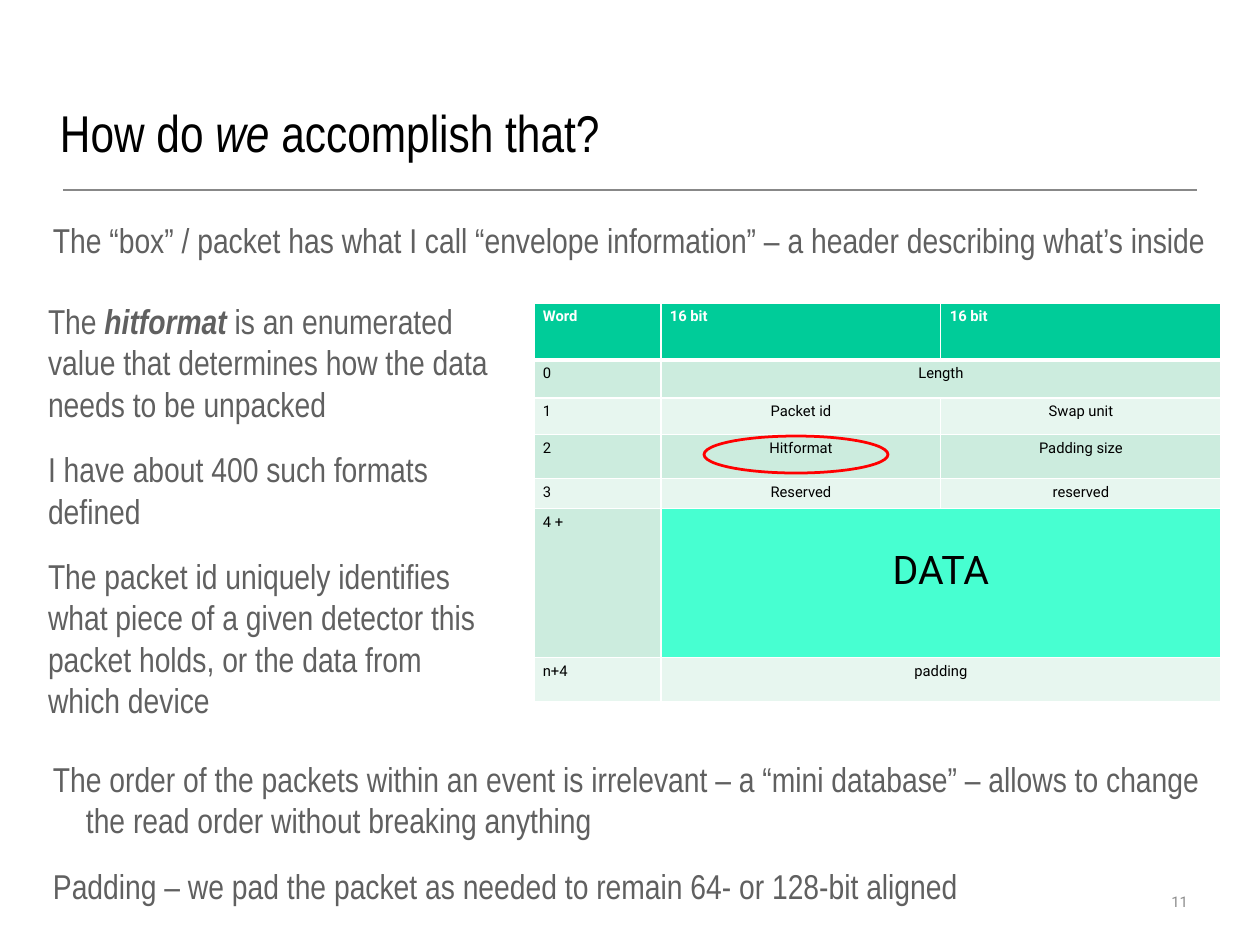
import pptx
import pptx.dml.color
import pptx.enum.shapes
import pptx.enum.text
import pptx.oxml
import pptx.oxml.ns
import pptx.util
from dataclasses import dataclass

ALIGN = pptx.enum.text.PP_ALIGN
ANCHOR = pptx.enum.text.MSO_ANCHOR

# Content: a paragraph is a list of (text, style), style being "", "b", "i" or "bi"
TITLE = [[("How do ", ""), ("we", "i"), (" accomplish that?", "")]]
INTRO = [[("The “box” / packet has what I call “envelope information” – "
           "a header describing what’s inside", "")]]
FORMATS = [
    [("The ", ""), ("hitformat", "bi"),
     (" is an enumerated value that determines how the data needs to be unpacked", "")],
    [("I have about 400 such formats defined", "")],
    [("The packet id uniquely identifies what piece of a given detector this packet holds, "
      "or the data from which device", "")],
]
CLOSING = [
    [("The order of the packets within an event is irrelevant – a “mini database” – "
      "allows to change the read order without breaking anything", "")],
    [("Padding – we pad the packet as needed to remain 64- or 128-bit aligned", "")],
]
PAGE_NUMBER = [[("11", "")]]

# Packet layout: row height in px, then cells; a row of two cells spans both halves
PACKET_COLUMNS = [127, 280, 280]
PACKET_ROWS = [
    (57, ["Word", "16 bit", "16 bit"]),
    (38, ["0", "Length"]),
    (37, ["1", "Packet id", "Swap unit"]),
    (44, ["2", "Hitformat", "Padding size"]),
    (30, ["3", "Reserved", "reserved"]),
    (149, ["4 +", "DATA"]),
    (44, ["n+4", "padding"]),
]


@dataclass(frozen=True)
class Theme:
    text_font: str = "Arial Narrow"
    table_font: str = "Roboto"
    title_size: float = 42
    body_size: float = 28
    data_size: float = 32
    small_size: float = 12
    paragraph_gap: float = 19.6
    black: str = "000000"
    white: str = "FFFFFF"
    body: str = "606060"
    rule: str = "888888"
    number: str = "8C8C8C"
    mark: str = "FF0000"
    header: str = "00CC99"
    band_dark: str = "CCECDE"
    band_light: str = "E7F6EF"
    data: str = "47FFD1"


THEME = Theme()


def px(length):
    return pptx.util.Emu(length * 10320)


def rgb(value):
    return pptx.dml.color.RGBColor.from_string(value)


def set_font(font, name, size, color):
    font.name = name
    font.size = pptx.util.Pt(size)
    font.color.rgb = rgb(color)


def add_text(slide, box, paragraphs, size, color, font=THEME.text_font, inset=5,
             hanging=False, anchor=ANCHOR.TOP, align=ALIGN.LEFT):
    frame = slide.shapes.add_textbox(*map(px, box)).text_frame
    frame.word_wrap = True
    frame.vertical_anchor = anchor
    frame.margin_left = frame.margin_right = px(inset)
    frame.margin_top = frame.margin_bottom = px(5)
    for index, runs in enumerate(paragraphs):
        paragraph = frame.add_paragraph() if index else frame.paragraphs[0]
        paragraph.alignment = align
        if index:
            paragraph.space_before = pptx.util.Pt(THEME.paragraph_gap)
        if hanging:
            properties = paragraph._p.get_or_add_pPr()
            properties.set("marL", str(px(34)))
            properties.set("indent", str(px(-33)))
        set_font(paragraph.font, font, size, color)
        for text, style in runs:
            run = paragraph.add_run()
            run.text = text
            if "b" in style:
                run.font.bold = True
            if "i" in style:
                run.font.italic = True


def set_borders(cell, bottom_width):
    """White lines on all four sides; they must precede the fill in tcPr."""
    properties = cell._tc.get_or_add_tcPr()
    sides = [("L", 1), ("R", 1), ("T", 1), ("B", bottom_width)]
    for position, (side, width) in enumerate(sides):
        properties.insert(position, pptx.oxml.parse_xml(
            f'<a:ln{side} {pptx.oxml.ns.nsdecls("a")} w="{pptx.util.Pt(width)}">'
            f'<a:solidFill><a:srgbClr val="{THEME.white}"/></a:solidFill></a:ln{side}>'))


def add_packet_table(slide, left, top):
    heights = [height for height, _ in PACKET_ROWS]
    table = slide.shapes.add_table(
        len(heights), len(PACKET_COLUMNS), px(left), px(top),
        px(sum(PACKET_COLUMNS)), px(sum(heights))).table
    for column, width in zip(table.columns, PACKET_COLUMNS):
        column.width = px(width)
    for r, (height, texts) in enumerate(PACKET_ROWS):
        table.rows[r].height = px(height)
        band = THEME.band_dark if r % 2 else THEME.band_light
        for c in range(len(PACKET_COLUMNS)):
            cell = table.cell(r, c)
            text = texts[c] if c < len(texts) else ""
            is_data = text == "DATA"
            cell.fill.solid()
            cell.fill.fore_color.rgb = rgb(
                THEME.header if r == 0 else THEME.data if is_data else band)
            set_borders(cell, 1 if r else 3)
            cell.text = text
            paragraph = cell.text_frame.paragraphs[0]
            paragraph.alignment = ALIGN.CENTER if r and c else ALIGN.LEFT
            set_font(paragraph.font, THEME.table_font,
                     THEME.data_size if is_data else THEME.small_size,
                     THEME.black if r else THEME.white)
            paragraph.font.bold = r == 0
            if is_data:
                cell.margin_top = px(39)
        if len(texts) == 2:
            table.cell(r, 1).merge(table.cell(r, 2))


def add_title_rule(slide):
    rule = slide.shapes.add_connector(
        pptx.enum.shapes.MSO_CONNECTOR.STRAIGHT, px(63), px(190), px(1197), px(190))
    rule.line.color.rgb = rgb(THEME.rule)
    rule.line.width = pptx.util.Pt(1)
    rule._element.spPr.append(
        pptx.oxml.parse_xml(f'<a:effectLst {pptx.oxml.ns.nsdecls("a")}/>'))


def add_hitformat_mark(slide):
    mark = slide.shapes.add_shape(
        pptx.enum.shapes.MSO_SHAPE.OVAL, px(704), px(436), px(184), px(37))
    mark.shadow.inherit = False
    mark.fill.background()
    mark.line.color.rgb = rgb(THEME.mark)
    mark.line.width = pptx.util.Pt(2.25)


def main():
    deck = pptx.Presentation()
    deck.slide_width, deck.slide_height = px(1260), px(945)
    slide = deck.slides.add_slide(deck.slide_layouts[6])
    add_title_rule(slide)
    add_text(slide, (55, 32, 1149, 136), TITLE, THEME.title_size, THEME.black,
             anchor=ANCHOR.BOTTOM)
    add_text(slide, (47, 214, 1185, 59), INTRO, THEME.body_size, THEME.body, hanging=True)
    add_packet_table(slide, 534, 303)
    add_hitformat_mark(slide)
    add_text(slide, (39, 295, 458, 541), FORMATS, THEME.body_size, THEME.body, inset=9)
    add_text(slide, (47, 753, 1185, 162), CLOSING, THEME.body_size, THEME.body, hanging=True)
    add_text(slide, (903, 876, 294, 51), PAGE_NUMBER, THEME.small_size, THEME.number,
             font=THEME.table_font, inset=9, anchor=ANCHOR.MIDDLE, align=ALIGN.RIGHT)
    deck.save("out.pptx")


if __name__ == "__main__":
    main()
